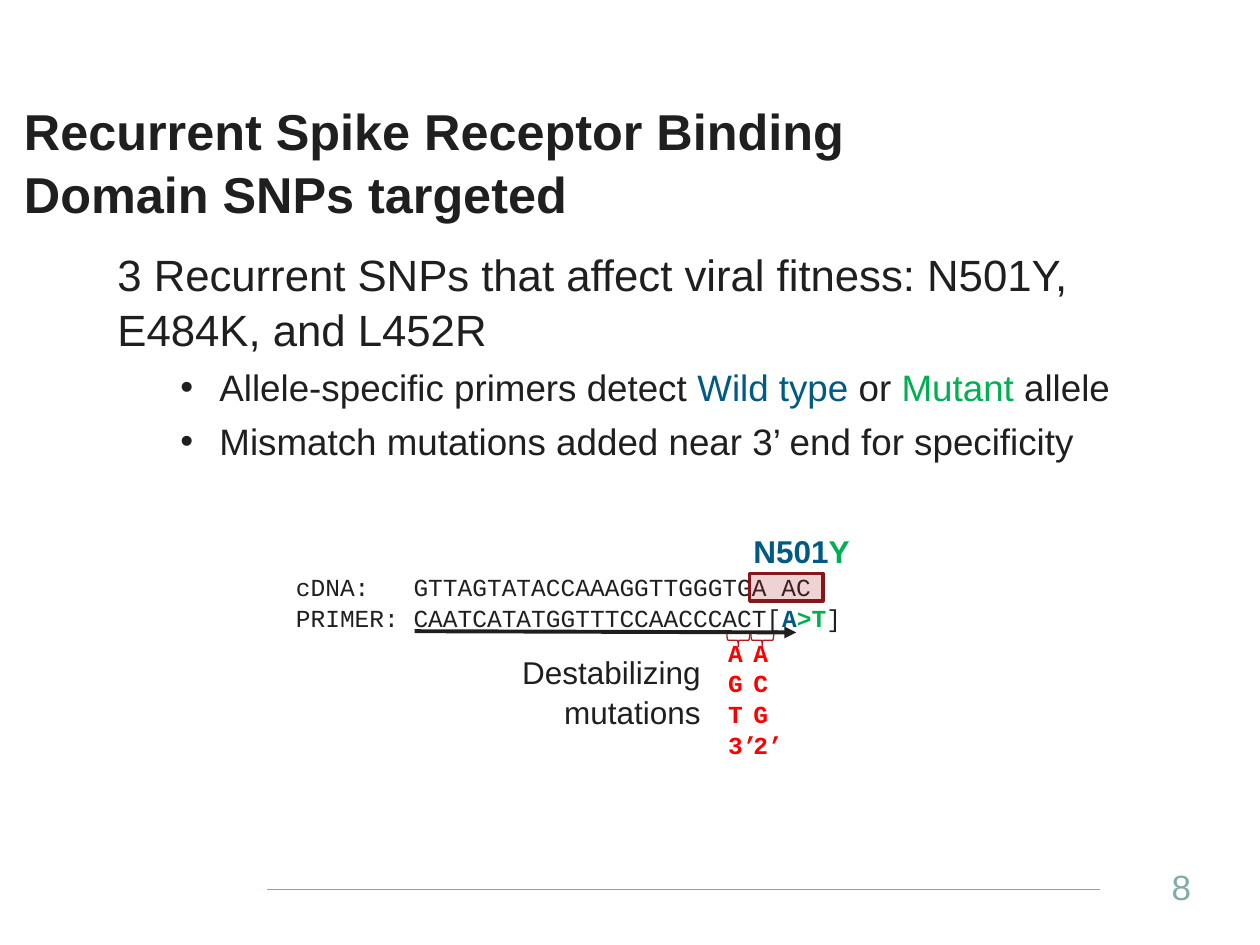
import pptx
import pptx.util
import pptx.dml.color
import pptx.enum.shapes
import pptx.enum.text
import pptx.oxml
import pptx.oxml.ns

Pt = pptx.util.Pt
SHAPE = pptx.enum.shapes.MSO_SHAPE
ALIGN = pptx.enum.text.PP_ALIGN
ANCHOR = pptx.enum.text.MSO_ANCHOR
FIT = pptx.enum.text.MSO_AUTO_SIZE

HUES = {
    "ink": "1F1F1F", "wild": "005A84", "mutant": "00B050", "base": "FF0000",
    "teal": "81ADA8", "fill": "B11F24", "edge": "83171B", "brace": "B11B20",
}
BODY = {"name": "Arial", "size": Pt(25)}
ITEM = {"name": "Arial", "size": Pt(21)}
LABEL = {"name": "Arial", "size": Pt(18)}
CODE = {"name": "Courier New", "size": Pt(14)}
BOLD = {"bold": True}


def color(key):
    return pptx.dml.color.RGBColor.from_string(HUES[key])


def node(root, tag, **attrs):
    item = pptx.oxml.parse_xml(f'<a:{tag} {pptx.oxml.ns.nsdecls("a")}/>')
    for key, value in attrs.items():
        item.set(key, str(value))
    root.append(item)
    return item


def apply(target, values):
    for key, value in values.items():
        setattr(target, key, value)


def write(para, runs, style, **form):
    apply(para, {"line_spacing": 1.05, "alignment": ALIGN.LEFT, **form})
    for text, hue, extra in runs:
        run = para.add_run()
        run.text = text
        apply(run.font, {**style, **extra})
        run.font.color.rgb = color(hue)


def place(shape, box):
    names = ("left", "top", "width", "height")
    apply(shape, dict(zip(names, map(Pt, box))))


def add_text(slide, box, lines, style, wrap=True, anchor=ANCHOR.TOP, **form):
    shape = slide.shapes.add_textbox(*map(Pt, box))
    frame = shape.text_frame
    apply(frame, {"word_wrap": wrap, "vertical_anchor": anchor})
    for i, runs in enumerate(lines):
        para = frame.add_paragraph() if i else frame.paragraphs[0]
        write(para, runs, style, **form)
    return frame


def add_title(slide, box, text):
    shape = slide.shapes.title
    place(shape, box)
    frame = shape.text_frame
    apply(frame, {"word_wrap": True, "auto_size": FIT.NONE,
                  "vertical_anchor": ANCHOR.TOP})
    style = {"name": "Arial", "size": Pt(28.8), "bold": True}
    write(frame.paragraphs[0], [(text, "ink", {})], style)


def add_item(frame, runs):
    para = frame.add_paragraph()
    write(para, runs, ITEM, space_before=Pt(4.2), level=1)
    props = para._p.get_or_add_pPr()
    props.set("marL", str(Pt(58.3)))
    props.set("indent", str(-Pt(22.3)))
    node(props, "buFont", typeface="Arial")
    node(props, "buChar", char="•")


def add_tab(frame, stop):
    for para in frame.paragraphs:
        tabs = node(para._p.get_or_add_pPr(), "tabLst")
        node(tabs, "tab", pos=Pt(stop), algn="l")


def add_line(slide, ends, hue, width, arrow=False):
    kind = pptx.enum.shapes.MSO_CONNECTOR.STRAIGHT
    line = slide.shapes.add_connector(kind, *map(Pt, ends))
    line.line.color.rgb = color(hue)
    line.line.width = Pt(width)
    if arrow:
        node(line.line._get_or_add_ln(), "tailEnd", type="triangle")
    node(line.element.spPr, "effectLst")


def add_shape(slide, kind, box, hue, width, fill=None, turn=0):
    shape = slide.shapes.add_shape(kind, *map(Pt, box))
    shape.shadow.inherit = False
    shape.rotation = turn
    shape.line.color.rgb = color(hue)
    shape.line.width = Pt(width)
    if fill:
        shape.fill.solid()
        shape.fill.fore_color.rgb = color(fill)
        tint = shape.element.xpath("./p:spPr/a:solidFill/a:srgbClr")[0]
        node(tint, "alpha", val=20000)
    else:
        shape.fill.background()


def main():
    deck = pptx.Presentation()
    deck.slide_width, deck.slide_height = Pt(720), Pt(540)
    slide = deck.slides.add_slide(deck.slide_layouts[5])

    add_line(slide, (152.6, 508.3, 628.6, 508.3), "teal", 0.5)
    add_title(slide, (6.5, 51.8, 571, 59),
              "Recurrent Spike Receptor Binding Domain SNPs targeted")
    lead = "3 Recurrent SNPs that affect viral fitness: N501Y, E484K, and L452R"
    body = add_text(slide, (60, 136.8, 613.4, 162.7),
                    [[(lead, "ink", {})]], BODY)
    add_item(body, [("Allele-specific primers detect ", "ink", {}),
                    ("Wild type ", "wild", {}), ("or ", "ink", {}),
                    ("Mutant", "mutant", {}), (" allele", "ink", {})])
    add_item(body, [("Mismatch mutations added near 3’ end for specificity",
                     "ink", {})])
    add_text(slide, (662.4, 491.8, 57.6, 28.8), [[("8", "teal", {})]],
             {"name": "Arial", "size": Pt(20)}, anchor=ANCHOR.MIDDLE)

    bases = add_text(slide, (162, 322.6, 334, 41), [
        [("cDNA:\tGTTAGTATACCAAAGGTTGGGTGA AC", "ink", {})],
        [("PRIMER:\tCAATCATATGGTTTCCAACCCACT[", "ink", {}),
         ("A", "wild", BOLD), (">T", "mutant", BOLD), ("]", "ink", {})],
    ], CODE)
    add_tab(bases, 67.2)
    add_line(slide, (236.9, 360.7, 455, 361.4), "ink", 2.25, arrow=True)

    for left, stack in ((409, ("A", "G", "T", "3’")),
                        (423.4, ("A", "C", "G", "2’"))):
        add_text(slide, (left, 360, 33, 75),
                 [[(base, "base", BOLD)] for base in stack], CODE)

    add_text(slide, (288, 368.6, 119.5, 51),
             [[("Destabilizing mutations", "ink", {})]], LABEL,
             alignment=ALIGN.RIGHT)
    add_text(slide, (423.4, 299.5, 69.8, 29),
             [[("N501", "wild", BOLD), ("Y", "mutant", BOLD)]], LABEL,
             wrap=False)
    add_shape(slide, SHAPE.RECTANGLE, (428.4, 327.6, 41.8, 15.8),
              "edge", 2, fill="fill")
    for left in (418.3, 432):
        add_shape(slide, SHAPE.LEFT_BRACE, (left, 359.3, 7.2, 13),
                  "brace", 0.75, turn=270)
    deck.save("out.pptx")


if __name__ == "__main__":
    main()
